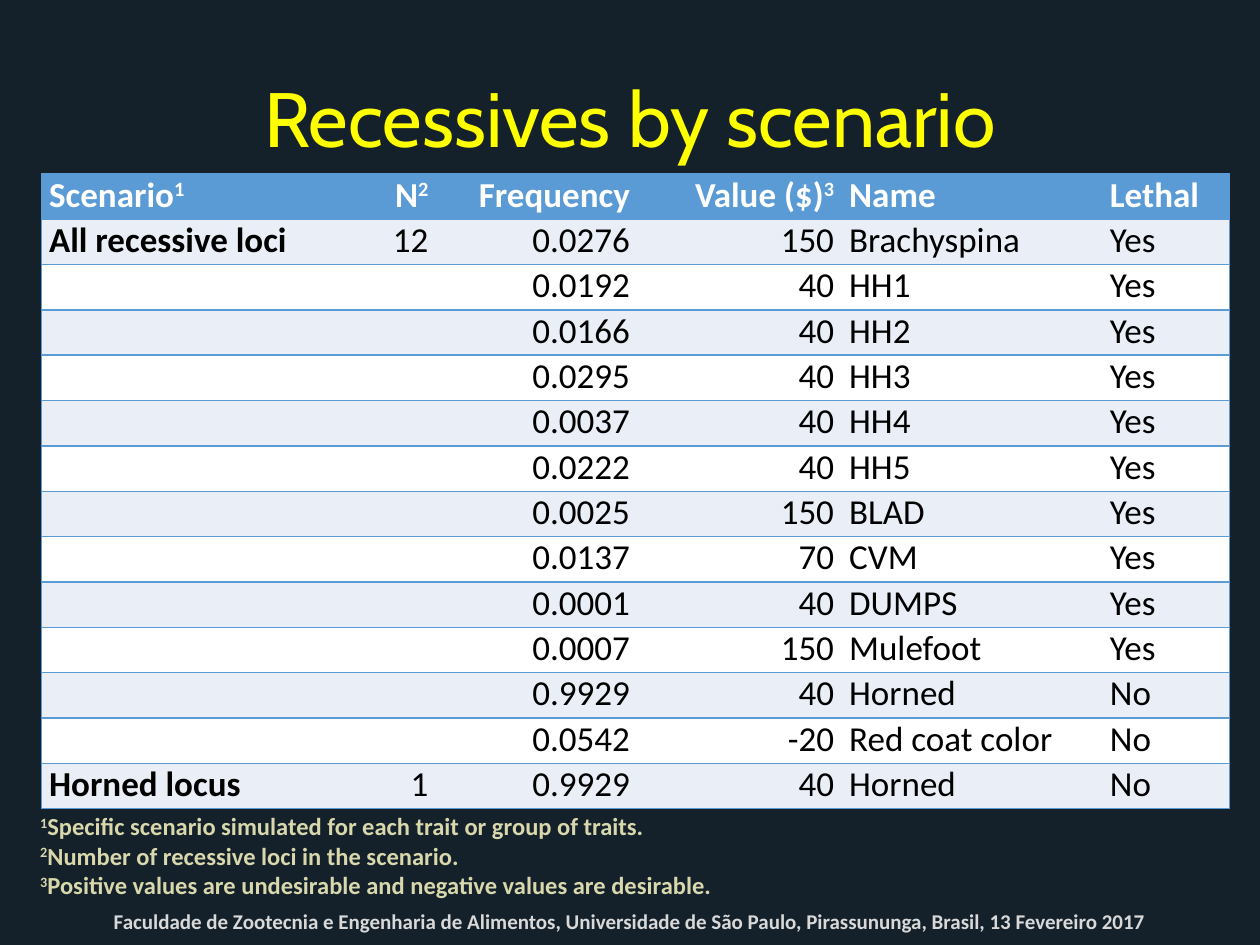
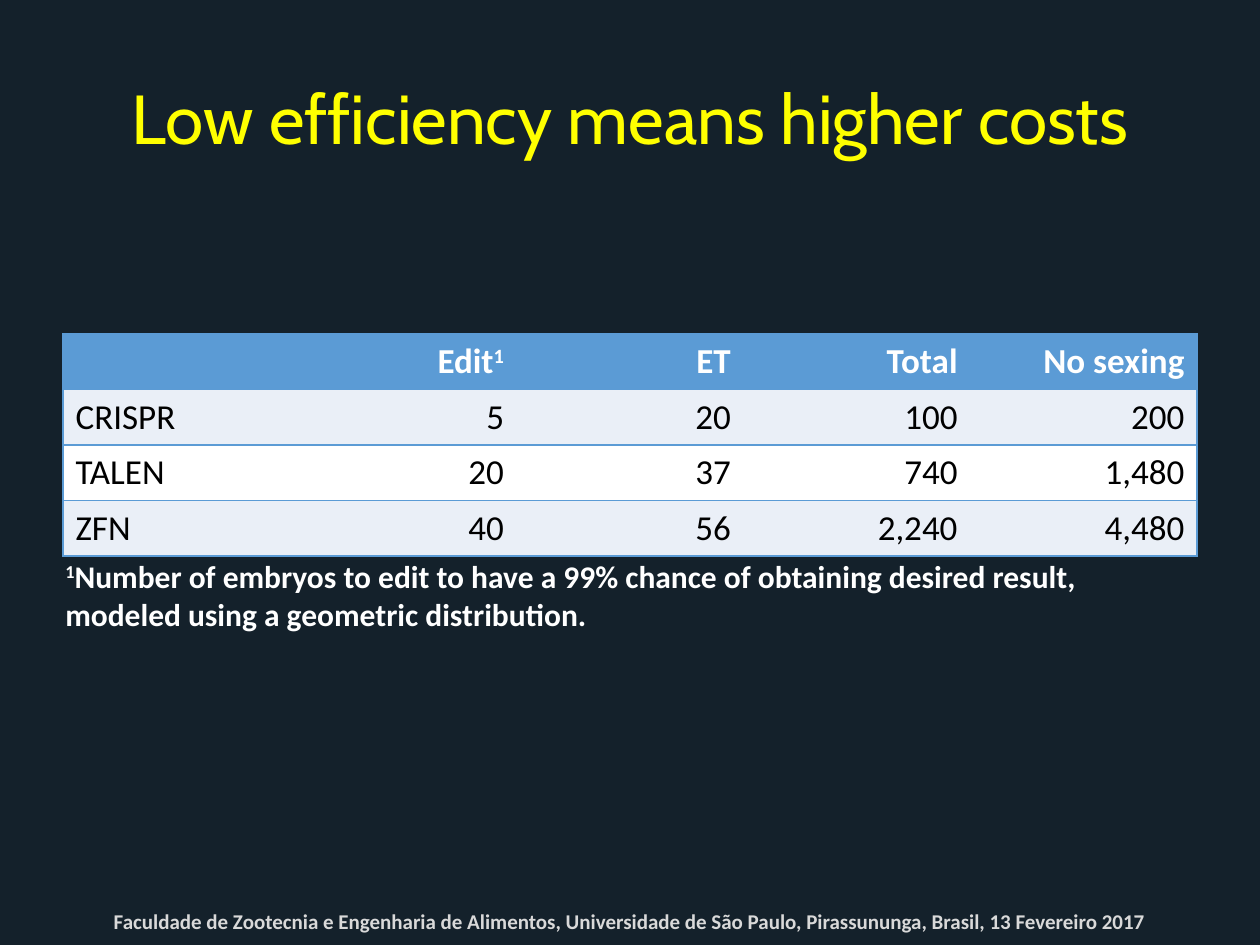
"""Build two dark slides with tables on recessive loci and editing costs."""
from lxml.etree import SubElement
from pptx import Presentation
from pptx.dml.color import RGBColor
from pptx.enum.text import MSO_ANCHOR, MSO_AUTO_SIZE, PP_ALIGN
from pptx.oxml.ns import qn
from pptx.util import Inches, Pt

DARK, YELLOW, BLUE, PALE = "14212B", "FFFF00", "5B9BD5", "EAEFF7"
WHITE, BLACK, SAND, GREY = "FFFFFF", "000000", "D9D7AC", "D9D9D9"
FOOTER = ("Faculdade de Zootecnia e Engenharia de Alimentos, Universidade de São Paulo, "
          "Pirassununga, Brasil, 13 Fevereiro 2017")


def hue(code):
    return RGBColor.from_string(code)


def write(para, text, size, color, bold=True, font="Calibri", align=PP_ALIGN.LEFT):
    """Add runs to a paragraph; the character after each ^ is raised."""
    para.alignment = align
    plain, *rest = text.split("^")
    parts = [(plain, False)]
    for part in rest:
        parts += [(part[0], True), (part[1:], False)]
    for words, raised in parts:
        if not words:
            continue
        run = para.add_run()
        run.text = words
        run.font.size = Pt(size)
        run.font.name = font
        run.font.bold = bold
        run.font.color.rgb = hue(color)
        if raised:
            run.font._element.set("baseline", "30000")


loci = [
    ("0.0276", "150", "Brachyspina", "Yes"),
    ("0.0192", "40", "HH1", "Yes"),
    ("0.0166", "40", "HH2", "Yes"),
    ("0.0295", "40", "HH3", "Yes"),
    ("0.0037", "40", "HH4", "Yes"),
    ("0.0222", "40", "HH5", "Yes"),
    ("0.0025", "150", "BLAD", "Yes"),
    ("0.0137", "70", "CVM", "Yes"),
    ("0.0001", "40", "DUMPS", "Yes"),
    ("0.0007", "150", "Mulefoot", "Yes"),
    ("0.9929", "40", "Horned", "No"),
    ("0.0542", "-20", "Red coat color", "No"),
    ("0.9929", "40", "Horned", "No"),
]
groups = {0: ("All recessive loci", "12"), 12: ("Horned locus", "1")}

pages = [
    {
        "title": "Recessives by scenario", "size": 44,
        "rows": [("Scenario^1", "N^2", "Frequency", "Value ($)^3", "Name", "Lethal")]
                + [groups.get(i, ("", "")) + locus for i, locus in enumerate(loci)],
        "spot": (0.33, 1.38), "widths": (2.23, 0.9, 1.6, 1.62, 2.07, 1.01), "high": 0.36,
        "pad": (0.06, 0), "right": (1, 2, 3), "bold": True,
        "notes": ["^1Specific scenario simulated for each trait or group of traits.",
                  "^2Number of recessive loci in the scenario.",
                  "^3Positive values are undesirable and negative values are desirable."],
        "box": (0.22, 6.39, 9.52, 0.81), "ink": (14, SAND),
    },
    {
        "title": "Low efficiency means higher costs", "size": 39.6,
        "rows": [("", "Edit^1", "ET", "Total", "No sexing"),
                 ("CRISPR", "5", "20", "100", "200"),
                 ("TALEN", "20", "37", "740", "1,480"),
                 ("ZFN", "40", "56", "2,240", "4,480")],
        "spot": (0.5, 2.65), "widths": (1.8,) * 5, "high": 0.44,
        "pad": (0.1, 0.05), "right": (1, 2, 3, 4), "bold": False,
        "notes": ["^1Number of embryos to edit to have a 99% chance of obtaining desired "
                  "result, modeled using a geometric distribution."],
        "box": (0.42, 4.37, 9, 0.71), "ink": (18, WHITE),
    },
]

deck = Presentation()
deck.slide_width, deck.slide_height = Inches(10), Inches(7.5)
back = deck.slide_master.background.fill
back.solid()
back.fore_color.rgb = hue(DARK)

for page in pages:
    slide = deck.slides.add_slide(deck.slide_layouts[5])
    title = slide.shapes.title
    title.left, title.top, title.width, title.height = map(Inches, (0.5, 0.3, 9, 1.25))
    frame = title.text_frame
    frame.vertical_anchor = MSO_ANCHOR.MIDDLE
    frame.auto_size = MSO_AUTO_SIZE.NONE
    write(frame.paragraphs[0], page["title"], page["size"], YELLOW, False, "Cabin", PP_ALIGN.CENTER)

    rows, widths, high = page["rows"], page["widths"], page["high"]
    area = (*page["spot"], sum(widths), high * len(rows))
    grid = slide.shapes.add_table(len(rows), len(widths), *map(Inches, area)).table
    for col, width in zip(grid.columns, widths):
        col.width = Inches(width)
    side, edge = map(Inches, page["pad"])
    for r, row in enumerate(rows):
        grid.rows[r].height = Inches(high)
        for c, text in enumerate(row):
            cell = grid.cell(r, c)
            cell.margin_left = cell.margin_right = side
            cell.margin_top = cell.margin_bottom = edge
            drawn = {"L": c == 0, "R": c == len(row) - 1, "T": True, "B": True}
            for name, shown in drawn.items():
                line = SubElement(cell._tc.get_or_add_tcPr(), qn("a:ln" + name), w="12700")
                paint = SubElement(line, qn("a:solidFill" if shown else "a:noFill"))
                if shown:
                    SubElement(paint, qn("a:srgbClr"), val=BLUE)
            cell.fill.solid()
            cell.fill.fore_color.rgb = hue(BLUE if r == 0 else PALE if r % 2 else WHITE)
            write(cell.text_frame.paragraphs[0], text, 20, BLACK if r else WHITE,
                  r == 0 or (c == 0 and page["bold"]),
                  align=PP_ALIGN.RIGHT if c in page["right"] else PP_ALIGN.LEFT)

    frame = slide.shapes.add_textbox(*map(Inches, page["box"])).text_frame
    frame.word_wrap = True
    frame.auto_size = MSO_AUTO_SIZE.SHAPE_TO_FIT_TEXT
    for i, note in enumerate(page["notes"]):
        para = frame.add_paragraph() if i else frame.paragraphs[0]
        write(para, note, *page["ink"])

    frame = slide.shapes.add_textbox(*map(Inches, (0.5, 7.06, 9, 0.4))).text_frame
    frame.word_wrap = True
    frame.vertical_anchor = MSO_ANCHOR.BOTTOM
    write(frame.paragraphs[0], FOOTER, 12, GREY, align=PP_ALIGN.CENTER)

deck.save("out.pptx")
